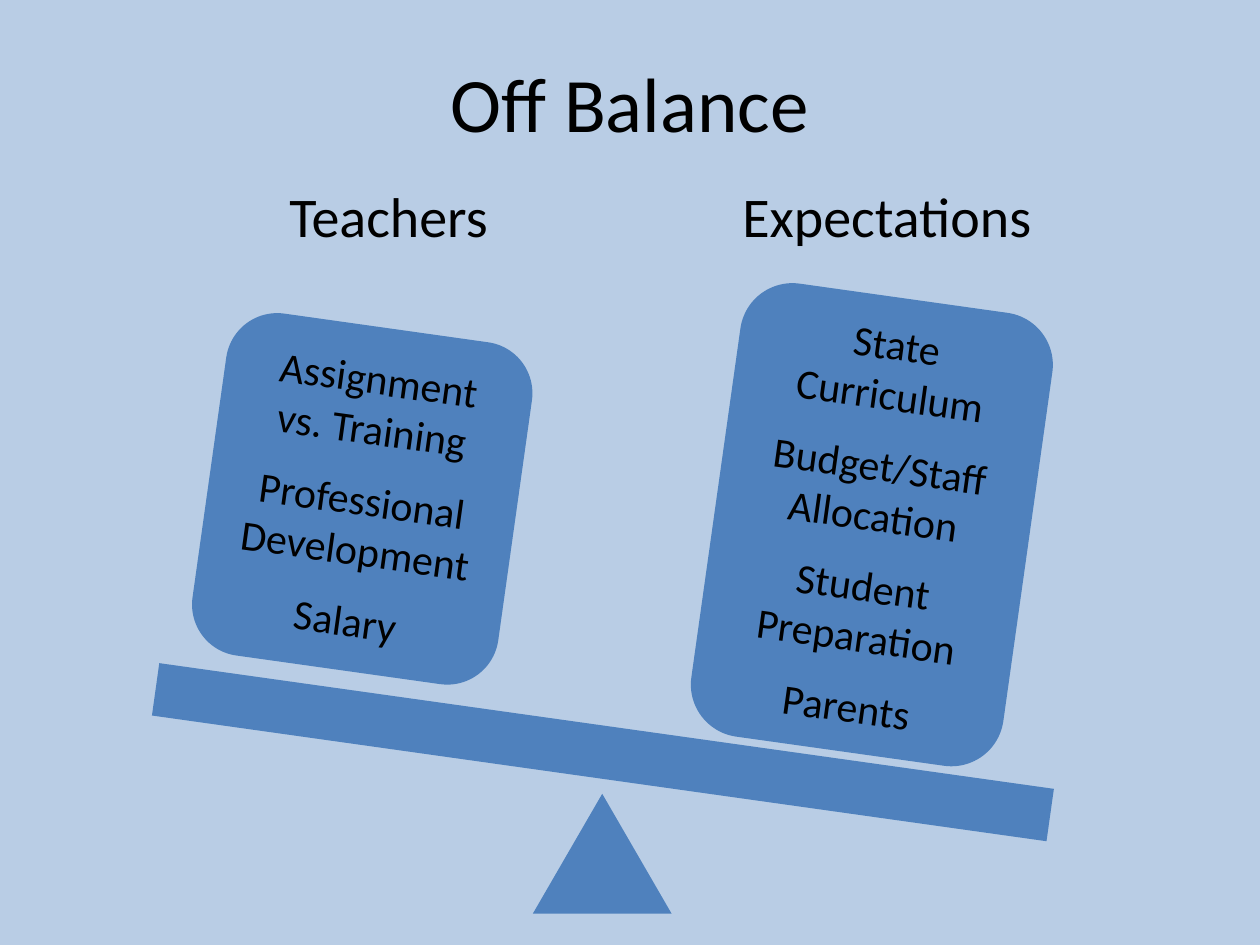
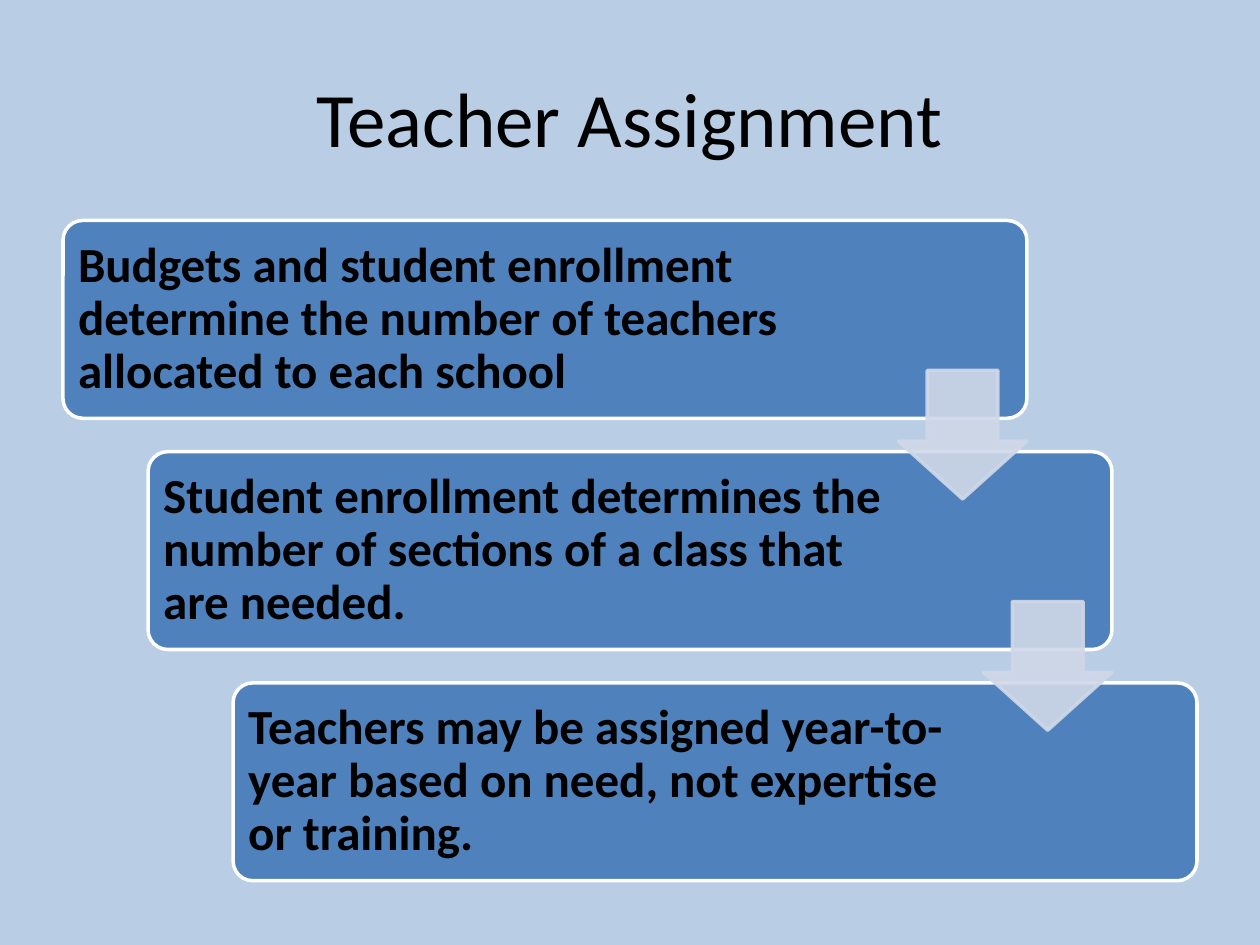
import pptx
import pptx.dml.color
import pptx.enum.shapes
import pptx.enum.text
import pptx.oxml
import pptx.oxml.ns
import pptx.util

Inches, Pt = pptx.util.Inches, pptx.util.Pt
SHAPE = pptx.enum.shapes.MSO_SHAPE
ALIGN = pptx.enum.text.PP_ALIGN
ANCHOR = pptx.enum.text.MSO_ANCHOR


def color(hex_string):
    return pptx.dml.color.RGBColor.from_string(hex_string)


def write(tf, *paragraphs, size=24, bold=False, align=ALIGN.CENTER,
          after=0, line_spacing=None, inset=None):
    """Fill a text frame, one paragraph per string."""
    tf.word_wrap = True
    tf.auto_size = pptx.enum.text.MSO_AUTO_SIZE.NONE
    tf.vertical_anchor = ANCHOR.MIDDLE
    if inset is not None:
        tf.margin_left = tf.margin_right = Inches(inset)
        tf.margin_top = tf.margin_bottom = Inches(inset)
    for i, text in enumerate(paragraphs):
        p = tf.add_paragraph() if i else tf.paragraphs[0]
        p.alignment = align
        p.space_after = Pt(after)
        if line_spacing:
            p.line_spacing = line_spacing
        r = p.add_run()
        r.text = text
        r.font.name = Deck.font
        r.font.size = Pt(size)
        r.font.bold = bold
        r.font.color.rgb = color(Deck.ink)


class Deck:
    font = "Calibri"
    ink = "000000"
    background = "B9CDE5"
    blue = "4F81BD"
    white = "FFFFFF"
    pale = "D0D8E8"

    def __init__(self):
        self.prs = pptx.Presentation()
        self.prs.slide_width, self.prs.slide_height = Inches(10), Inches(7.5)
        self.s = None

    def slide(self, title, title_top=0.3):
        self.s = self.prs.slides.add_slide(self.prs.slide_layouts[5])
        fill = self.s.background.fill
        fill.solid()
        fill.fore_color.rgb = color(self.background)
        sp = self.s.shapes.title
        sp.left, sp.top = Inches(0.5), Inches(title_top)
        sp.width, sp.height = Inches(9), Inches(1.25)
        write(sp.text_frame, title, size=44)

    def shape(self, kind, *box, fill=blue, line=None, rotation=0, adjust=(), opacity=None):
        sp = self.s.shapes.add_shape(kind, *map(Inches, box))
        sp.shadow.inherit = False
        sp.rotation = rotation
        for i, value in enumerate(adjust):
            sp.adjustments[i] = value
        sp.fill.solid()
        sp.fill.fore_color.rgb = color(fill)
        if line:
            sp.line.color.rgb = color(line)
            sp.line.width = Pt(2)
        else:
            sp.line.fill.background()
        if opacity:
            for clr in sp._element.spPr.iter(pptx.oxml.ns.qn("a:srgbClr")):
                alpha = clr.makeelement(pptx.oxml.ns.qn("a:alpha"), {"val": str(opacity * 1000)})
                clr.append(alpha)
        return sp

    def text(self, text, *box, **style):
        sp = self.s.shapes.add_textbox(*map(Inches, box))
        write(sp.text_frame, text, **style)


def off_balance(deck):
    deck.slide("Off Balance", title_top=0.18)
    tilt = 8

    # Seesaw
    deck.shape(SHAPE.ISOSCELES_TRIANGLE, 4.23, 6.3, 1.1, 0.95)
    deck.shape(SHAPE.RECTANGLE, 1.2, 5.76, 7.17, 0.42, rotation=tilt)

    # Weights on either side
    weights = [
        ((1.65, 2.59, 2.45, 2.74),
         ["Assignment vs. Training", "Professional Development", "Salary"]),
        ((5.67, 2.35, 2.5, 3.63),
         ["State Curriculum", "Budget/Staff Allocation", "Student Preparation", "Parents"]),
    ]
    for box, items in weights:
        sp = deck.shape(SHAPE.ROUNDED_RECTANGLE, *box, rotation=tilt)
        write(sp.text_frame, *items, after=12)

    # Side headings
    for heading, left, width in [("Teachers", 1.92, 2.33), ("Expectations", 5.75, 2.58)]:
        sp = deck.shape(SHAPE.ROUNDED_RECTANGLE, left, 1.33, width, 0.76, fill=deck.background)
        write(sp.text_frame, heading, size=32)


def teacher_assignment(deck):
    deck.slide("Teacher Assignment")
    left, top, width, height = 0.5, 1.75, 7.65, 1.57
    step_x, step_y, arrow = 0.675, 1.835, 1.02
    steps = [
        ("Budgets and student enrollment determine the number of teachers "
         "allocated to each school", 6.04),
        ("Student enrollment determines the number of sections of a class "
         "that are needed.", 5.95),
        ("Teachers may be assigned year-to-year based on need, not expertise "
         "or training.", 5.95),
    ]

    # Staircase of steps
    for i, (text, text_width) in enumerate(steps):
        x, y = left + i * step_x, top + i * step_y
        deck.shape(SHAPE.ROUNDED_RECTANGLE, x, y, width, height,
                   line=deck.white, adjust=[0.1])
        deck.text(text, x, y, text_width, height, size=28, bold=True,
                  align=ALIGN.LEFT, line_spacing=0.9, inset=0.12)

    # Arrows from each step to the next, flush with the step's right edge
    for i in range(len(steps) - 1):
        deck.shape(SHAPE.DOWN_ARROW, left + width - arrow + i * step_x, 2.94 + i * step_y,
                   arrow, arrow, fill=deck.pale, line=deck.pale,
                   adjust=[0.55, 0.45], opacity=90)


def main():
    deck = Deck()
    off_balance(deck)
    teacher_assignment(deck)
    deck.prs.save("out.pptx")


if __name__ == "__main__":
    main()
